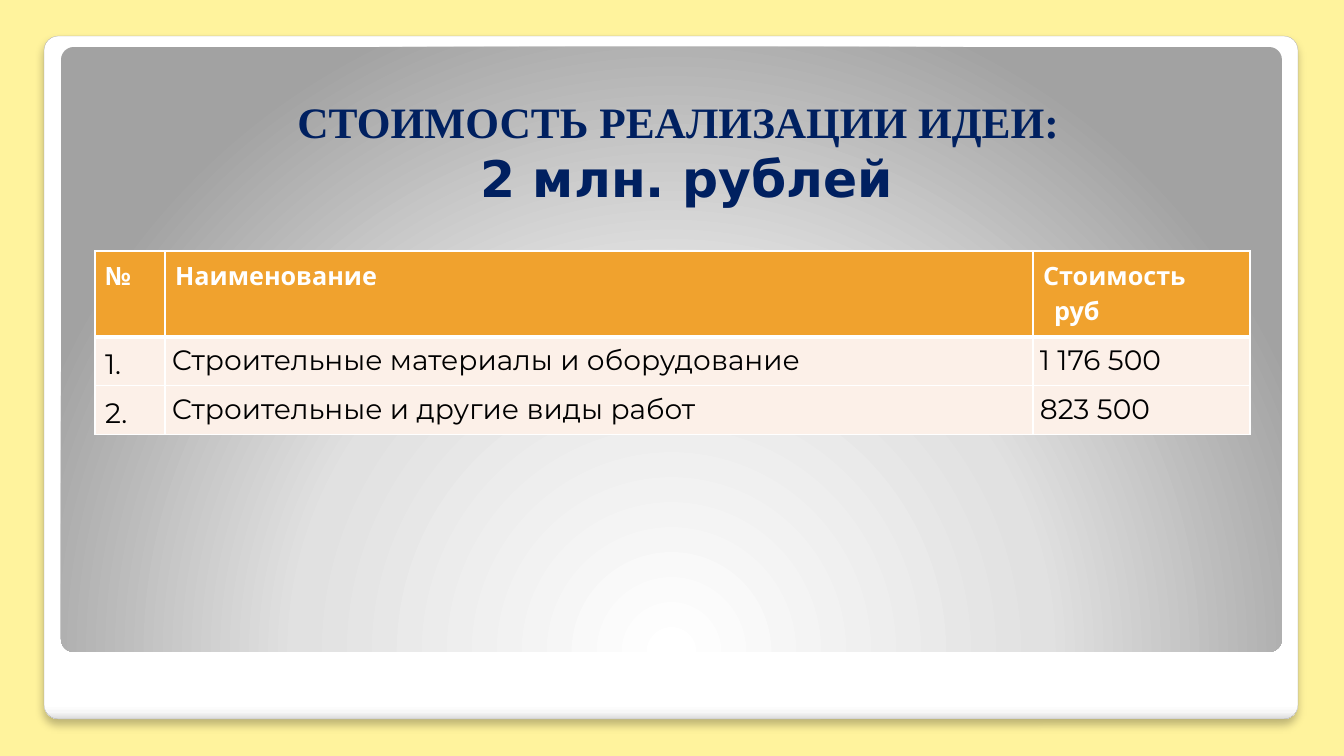
from lxml import etree
from pptx import Presentation
from pptx.dml.color import RGBColor
from pptx.enum.shapes import MSO_SHAPE
from pptx.enum.text import MSO_ANCHOR, PP_ALIGN
from pptx.oxml import parse_xml
from pptx.oxml.ns import qn
from pptx.util import Pt

ROUNDED = MSO_SHAPE.ROUNDED_RECTANGLE
BOTTOM = MSO_ANCHOR.BOTTOM
CENTER = PP_ALIGN.CENTER
PX = 914400 / 100.8
DRAWING_NS = "http://schemas.openxmlformats.org/drawingml/2006/main"
COLORS = {
    "page": "FFF39D", "white": "FFFFFF", "frame_line": "A4A4A4",
    "title": "002060", "header": "F0A22E", "row": "FCF0E8", "text": "000000",
}


def px(*lengths):
    return [round(length * PX) for length in lengths]


def add_run(para, text, font, size, color, bold):
    span = para.add_run()
    span.text = text
    span.font.name = font
    span.font.size = Pt(size)
    span.font.bold = bold
    span.font.color.rgb = RGBColor.from_string(COLORS[color])


deck = Presentation()
deck.slide_width, deck.slide_height = px(1344, 756)
page = deck.slides.add_slide(deck.slide_layouts[6])
page.background.fill.solid()
page.background.fill.fore_color.rgb = RGBColor.from_string(COLORS["page"])

# Frame and inner panel: bounds, gradient stops, gradient direction
PANELS = [
    ((44, 36, 1254, 683),
     [(0, "FFFFFF"), (98, "FFFFFF"), (99, "F7F7F7"), (100, "DADADA")],
     '<a:lin ang="5400000" scaled="0"/>'),
    ((61, 47, 1221, 605),
     [(0, "FFFFFF"), (55, "E1E1E1"), (100, "A2A2A2")],
     '<a:path path="circle"><a:fillToRect l="50000" t="175000" r="50000" b="-75000"/></a:path>'),
]
panels = []
for bounds, stops, direction in PANELS:
    panel = page.shapes.add_shape(ROUNDED, *px(*bounds))
    panel.adjustments[0] = 0.021
    panel.shadow.inherit = False
    panel.line.fill.background()
    panel.fill.gradient()
    stop_xml = "".join(
        f'<a:gs pos="{percent * 1000}"><a:srgbClr val="{color}"/></a:gs>'
        for percent, color in stops)
    gradient = parse_xml(
        f'<a:gradFill xmlns:a="{DRAWING_NS}" rotWithShape="1">'
        f'<a:gsLst>{stop_xml}</a:gsLst>{direction}</a:gradFill>')
    properties = panel.element.spPr
    properties.replace(properties.find(qn("a:gradFill")), gradient)
    panels.append(panel)

# Frame outline and soft shadow
frame = panels[0]
frame.line.color.rgb = RGBColor.from_string(COLORS["frame_line"])
frame.line.width = Pt(0.16)
frame.element.spPr.find(qn("a:effectLst")).append(parse_xml(
    f'<a:outerShdw xmlns:a="{DRAWING_NS}" blurRad="{Pt(6)}" dist="{Pt(4)}" '
    'dir="5400000" algn="ctr" rotWithShape="0">'
    '<a:srgbClr val="000000"><a:alpha val="25000"/></a:srgbClr></a:outerShdw>'))

# Title
title_box = page.shapes.add_textbox(*px(75, 68, 1206, 145))
title_box.text_frame.word_wrap = True
title_box.text_frame.vertical_anchor = BOTTOM
para = title_box.text_frame.paragraphs[0]
para.alignment = CENTER
add_run(para, "СТОИМОСТЬ РЕАЛИЗАЦИИ ИДЕИ:", "Times New Roman", 31, "title", True)
para.add_line_break()
add_run(para, " 2 млн. рублей", "DejaVu Sans", 36, "title", True)

# Cost table
ROWS = [
    ["№", "Наименование", "Стоимость\nруб"],
    ["1.", "Строительные материалы и оборудование", "1 176 500"],
    ["2.", "Строительные и другие виды работ", "823 500"],
]
COLUMN_WIDTHS = px(70, 868, 217)
ROW_HEIGHTS = px(86, 38, 38)
table = page.shapes.add_table(
    len(ROWS), len(COLUMN_WIDTHS), *px(95, 251),
    sum(COLUMN_WIDTHS), sum(ROW_HEIGHTS)).table
for column, width in zip(table.columns, COLUMN_WIDTHS):
    column.width = width
for row, height in zip(table.rows, ROW_HEIGHTS):
    row.height = height

for row_index, texts in enumerate(ROWS):
    is_header = row_index == 0
    style = ("Cabin", 18, "white", True) if is_header else ("Montserrat", 20, "text", False)
    for column_index, text in enumerate(texts):
        cell = table.cell(row_index, column_index)
        cell.fill.solid()
        cell.fill.fore_color.rgb = RGBColor.from_string(COLORS["header" if is_header else "row"])
        if not is_header and column_index > 0:
            (cell.margin_left, cell.margin_top,
             cell.margin_right, cell.margin_bottom) = px(7, 1, 7, 0)

        # Lines of text, later ones indented
        for line_index, line in enumerate(text.split("\n")):
            para = cell.text_frame.paragraphs[0] if line_index == 0 else cell.text_frame.add_paragraph()
            para.line_spacing = 1.15
            if line_index > 0:
                para._p.get_or_add_pPr().set("marL", str(px(11)[0]))
            add_run(para, line, *style)

        # White borders, thick between header and body
        widths = {"L": 1, "R": 1, "T": 3 if row_index == 1 else 1, "B": 3 if is_header else 1}
        cell_properties = cell._tc.get_or_add_tcPr()
        for position, (side, width) in enumerate(widths.items()):
            border = etree.Element(qn(f"a:ln{side}"), w=str(Pt(width)))
            solid = etree.SubElement(border, qn("a:solidFill"))
            etree.SubElement(solid, qn("a:srgbClr"), val=COLORS["white"])
            cell_properties.insert(position, border)

deck.save("out.pptx")
